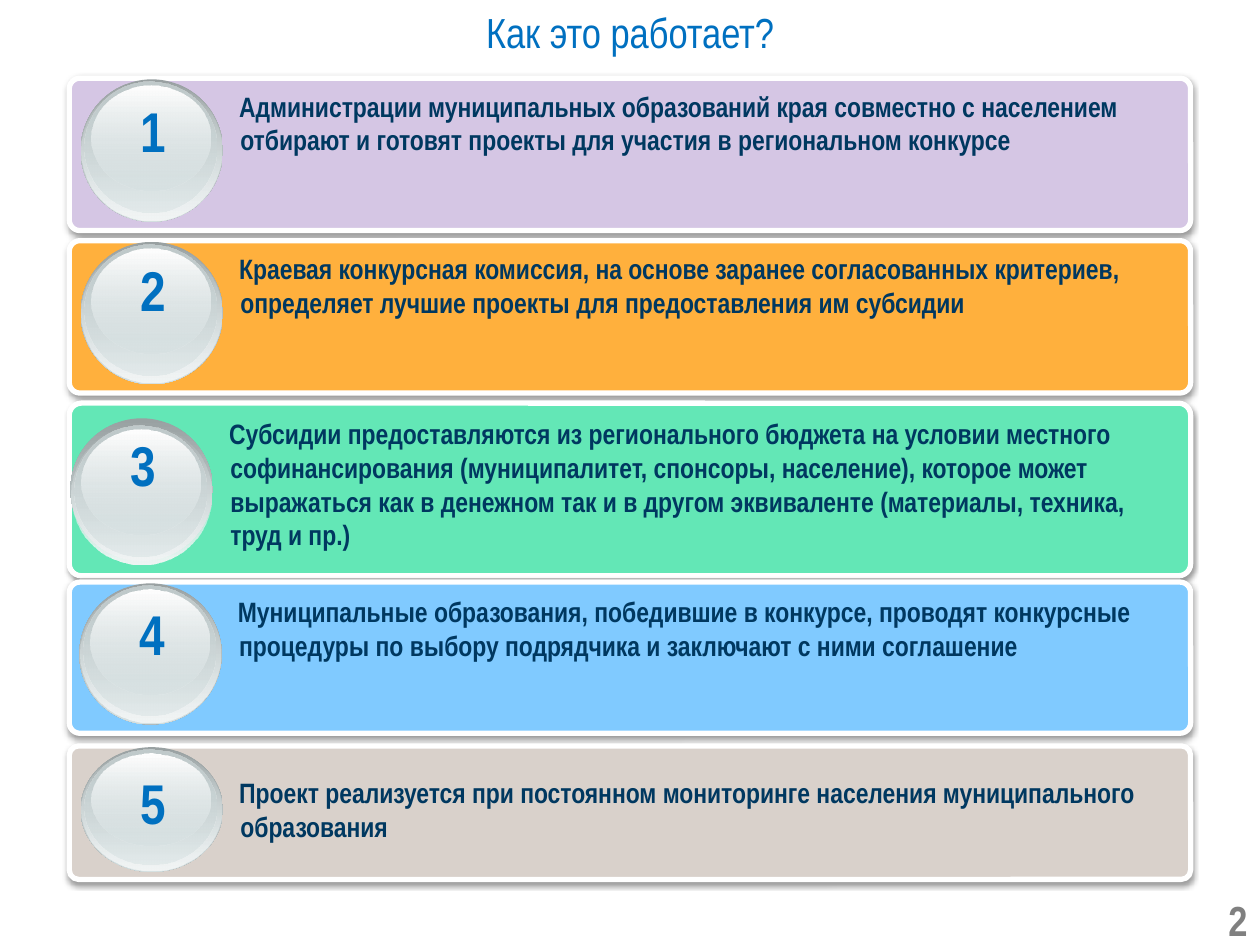
from dataclasses import dataclass

from lxml import etree
from pptx import Presentation
from pptx import util as u
from pptx.dml import color
from pptx.enum import shapes, text
from pptx.oxml import ns

FONT = "Arial Narrow"
BLUE, NAVY, GREY, WHITE = "0070C0", "003860", "808080", "FFFFFF"
BADGE_WIDTH = 1.13

# Inset left, inset top, width, share of badge height, gradient colours, end opacities
GLASS_LAYERS = [
    (0, 0, 1.13, 1, ("99A1A2", 100), ("D6E1E2", 100)),
    (0.01, 0.01, 1.11, 0.98, ("D6E1E2", 0), ("F2F5F5", 100)),
    (0.03, 0.02, 1.05, 0.92, ("C1CBCC", 100), ("D6E1E2", 48)),
    (0.09, 0.05, 0.94, 0.74, ("FFFFFF", 100), ("D6E1E2", 38)),
]


@dataclass
class Step:
    """One numbered step, with offsets measured from the top of its card."""

    wording: str
    fill: str
    top: float
    height: float
    text_drop: float
    number_drop: float
    badge_height: float = 1.13
    badge_left: float = 0.64
    badge_drop: float = 0.01
    glass_drop: float = 0
    text_height: float = 0.64


STEPS = [
    Step("Администрации муниципальных образований края совместно с населением "
         "отбирают и готовят проекты для участия в региональном конкурсе",
         "D5C6E4", 0.62, 1.21, 0.04, 0.1),
    Step("Краевая конкурсная комиссия, на основе заранее согласованных критериев, "
         "определяет лучшие проекты для предоставления им субсидии",
         "FFB03D", 1.91, 1.21, 0.04, 0.07),
    Step("Субсидии предоставляются из регионального бюджета на условии местного "
         "софинансирования (муниципалитет, спонсоры, население), которое может "
         "выражаться как в денежном так и в другом эквиваленте (материалы, техника, "
         "труд и пр.)",
         "63E7B6", 3.2, 1.37, 0.06, 0.17,
         badge_left=0.56, badge_drop=0.12, glass_drop=0.04, text_height=1.18),
    Step("Муниципальные образования, победившие в конкурсе, проводят конкурсные "
         "процедуры по выбору подрядчика и заключают с ними соглашение",
         "80CAFF", 4.62, 1.2, 0.05, 0.09, badge_height=1.12, badge_left=0.63),
    Step("Проект реализуется при постоянном мониторинге населения муниципального "
         "образования",
         "D9D1CB", 5.92, 1.06, 0.19, 0.13, badge_height=0.99),
]


def rgb(value):
    """Return a colour from a hex string."""
    return color.RGBColor.from_string(value)


def inches(*lengths):
    """Convert several lengths to inches."""
    return [u.Inches(length) for length in lengths]


def add_part(parent, tag, **attributes):
    """Append a drawing element with attributes."""
    part = etree.SubElement(parent, ns.qn(tag))
    for name, value in attributes.items():
        part.set(name, str(value))
    return part


def add_colour(parent, value, opacity):
    """Append a colour with its opacity in percent."""
    colour = add_part(parent, "a:srgbClr", val=value)
    add_part(colour, "a:alpha", val=opacity * 1000)


def style_text(box, wording, size, colour, bold=True, align=text.PP_ALIGN.LEFT):
    """Fill a box with one formatted paragraph."""
    frame = box.text_frame
    frame.word_wrap = True
    frame.text = wording
    para = frame.paragraphs[0]
    para.alignment = align
    font = para.font
    font.name, font.size, font.bold = FONT, u.Pt(size), bold
    font.color.rgb = rgb(colour)
    return para


def add_text(page, place, wording, size, colour, align=text.PP_ALIGN.LEFT):
    """Add a bold text box and return it with its paragraph."""
    box = page.shapes.add_textbox(*inches(*place))
    return box, style_text(box, wording, size, colour, align=align)


def add_card(page, step):
    """Add the rounded card with a white border and a soft shadow."""
    card = page.shapes.add_shape(shapes.MSO_SHAPE.ROUNDED_RECTANGLE,
                                 *inches(0.55, step.top, 8.9, step.height))
    card.adjustments[0] = 0.07
    card.fill.solid()
    card.fill.fore_color.rgb = rgb(step.fill)
    card.line.color.rgb = rgb(WHITE)
    card.line.width = u.Pt(3)
    effects = add_part(card._element.spPr, "a:effectLst")
    shadow = add_part(effects, "a:outerShdw", blurRad=u.Pt(3.1), dist=u.Pt(1.6),
                      dir=5400000, rotWithShape=0)
    add_colour(shadow, "000000", 38)


def add_glass(page, place, start, end):
    """Add a borderless ellipse with a vertical gradient."""
    glass = page.shapes.add_shape(shapes.MSO_SHAPE.OVAL, *inches(*place))
    glass.shadow.inherit = False
    glass.line.fill.background()
    gradient = etree.Element(ns.qn("a:gradFill"), rotWithShape="1")
    stops = add_part(gradient, "a:gsLst")
    for position, (value, opacity) in ((0, start), (100000, end)):
        add_colour(add_part(stops, "a:gs", pos=position), value, opacity)
    add_part(gradient, "a:lin", ang=5400000, scaled=0)
    glass._element.spPr.find(ns.qn("a:prstGeom")).addnext(gradient)


def add_badge(page, step, number):
    """Add the layered glass badge and its number."""
    top = step.top + step.badge_drop
    for index, (left, drop, width, share, start, end) in enumerate(GLASS_LAYERS):
        shift = step.glass_drop if index else 0
        add_glass(page, (step.badge_left + left, top + drop + shift,
                         width, step.badge_height * share), start, end)
    add_text(page, (step.badge_left + 0.01, step.top + step.number_drop,
                    BADGE_WIDTH, 0.7), str(number), 32, BLUE, text.PP_ALIGN.CENTER)


def add_step(page, step, number):
    """Add a card with its wording and badge."""
    add_card(page, step)
    place = (step.badge_left + 1.16, step.top + step.text_drop, 7.57, step.text_height)
    _, para = add_text(page, place, step.wording, 16, NAVY)
    properties = para._p.get_or_add_pPr()
    properties.set("marL", str(u.Inches(0.01)))
    properties.set("indent", str(u.Inches(-0.01)))
    add_badge(page, step, number)


def add_title(page, wording):
    """Place and format the title."""
    title = page.shapes.title
    title.left, title.top, title.width, title.height = inches(0, 0, 10, 0.5)
    style_text(title, wording, 24, BLUE, bold=False, align=text.PP_ALIGN.CENTER)
    title.text_frame.vertical_anchor = text.MSO_ANCHOR.MIDDLE


def main():
    """Build and save the slide."""
    deck = Presentation()
    deck.slide_width, deck.slide_height = inches(10, 7.5)
    page = deck.slides.add_slide(deck.slide_layouts[5])
    add_title(page, "Как это работает?")
    for number, step in enumerate(STEPS, 1):
        add_step(page, step, number)
    box, _ = add_text(page, (9.17, 7.1, 0.83, 0.4), "2", 24, GREY, text.PP_ALIGN.RIGHT)
    box.text_frame.vertical_anchor = text.MSO_ANCHOR.MIDDLE
    deck.save("out.pptx")


if __name__ == "__main__":
    main()
